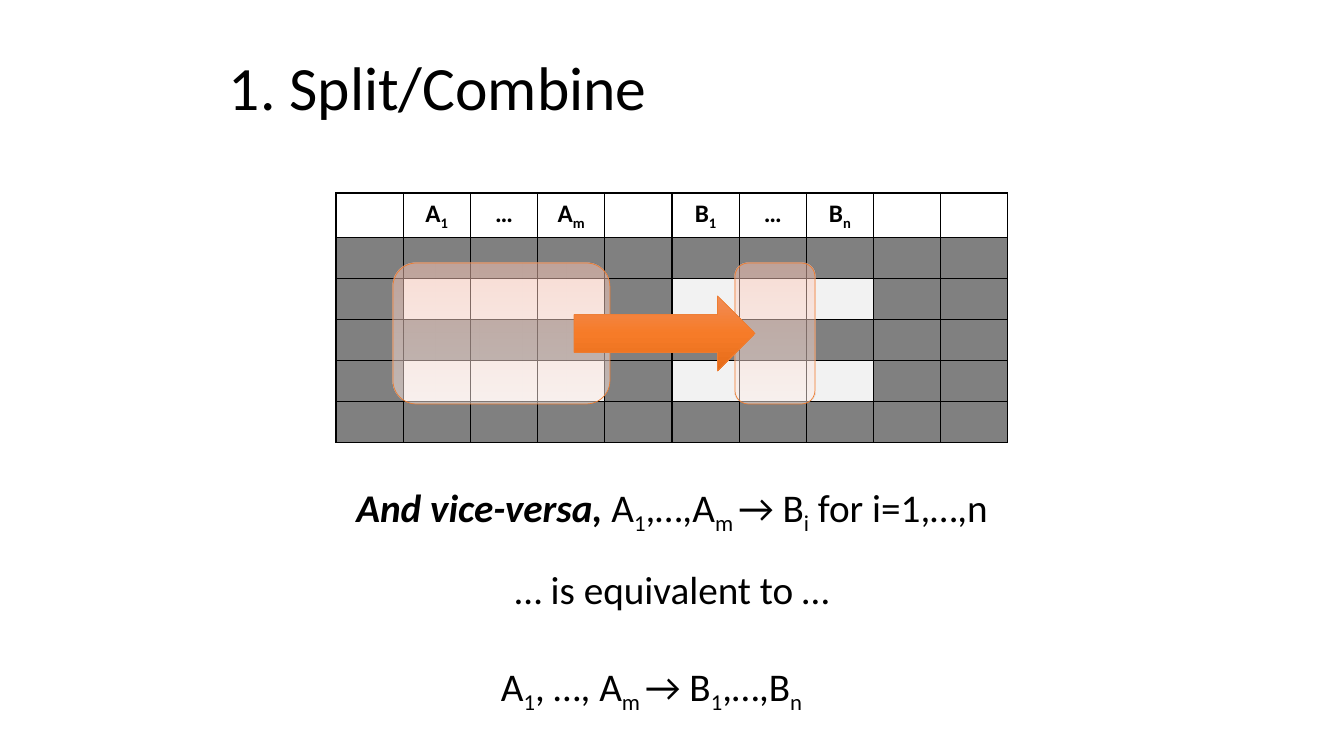
from lxml import etree
from pptx import Presentation
from pptx import util as u
from pptx.dml.color import RGBColor
from pptx.enum import shapes, text
from pptx.oxml import ns

PX = 914400 / 100.8
BLACK = RGBColor(0x00, 0x00, 0x00)
WHITE = RGBColor(0xFF, 0xFF, 0xFF)
GRAY = RGBColor(0x80, 0x80, 0x80)
PALE = RGBColor(0xF2, 0xF2, 0xF2)
ORANGE = RGBColor(0xED, 0x7D, 0x31)
PEACH_TOP = RGBColor(0xFF, 0xC7, 0xB6)
PEACH_MID = RGBColor(0xFF, 0xD7, 0xCB)
PEACH_LOW = RGBColor(0xFF, 0xF0, 0xEB)
ARROW_TOP = RGBColor(0xF1, 0x8C, 0x57)
ARROW_MID = RGBColor(0xF6, 0x7B, 0x28)
ARROW_LOW = RGBColor(0xE5, 0x6C, 0x19)


def emu(*lengths):
    return [u.Emu(round(length * PX)) for length in lengths]


def write(para, marked, size, bold=False):
    para.font.name = "Calibri"
    para.font.size = u.Pt(size)
    para.font.color.rgb = BLACK
    if bold:
        para.font.bold = True
    for index, part in enumerate(marked.split("_")):
        if part:
            span = para.add_run()
            span.text = part
            if index % 2:
                span.font._element.set("baseline", "-25000")


deck = Presentation()
deck.slide_width, deck.slide_height = emu(1344, 756)
page = deck.slides.add_slide(deck.slide_layouts[6])

title = page.shapes.add_textbox(*emu(219, 28, 907, 126)).text_frame
title.word_wrap = True
title.vertical_anchor = text.MSO_ANCHOR.MIDDLE
title.paragraphs[0].line_spacing = 0.9
write(title.paragraphs[0], "1. Split/Combine", 44)

headers = ["", "A_1_", "…", "A_m_", "", "B_1_", "…", "B_n_", "", ""]
table = page.shapes.add_table(6, 10, *emu(336, 193, 672, 249)).table
table.first_row = False
table.horz_banding = False
for column in table.columns:
    column.width = emu(672 / 10)[0]
for r, row in enumerate(table.rows):
    row.height = emu(41 if r else 44)[0]
    for c, cell in enumerate(row.cells):
        para = cell.text_frame.paragraphs[0]
        para.alignment = text.PP_ALIGN.CENTER
        write(para, "" if r else headers[c], 18, bold=True)
        cell.fill.solid()
        if r == 0:
            cell.fill.fore_color.rgb = WHITE
        else:
            cell.fill.fore_color.rgb = PALE if r in (2, 4) and headers[c] else GRAY
        properties = cell._tc.get_or_add_tcPr()
        for position, side in enumerate(("lnL", "lnR", "lnT", "lnB")):
            border = etree.Element(ns.qn(f"a:{side}"), w=str(u.Pt(1)))
            fill = etree.SubElement(border, ns.qn("a:solidFill"))
            etree.SubElement(fill, ns.qn("a:srgbClr"), val=str(BLACK))
            properties.insert(position, border)

statements = [
    (491, 657, 420, text.PP_ALIGN.LEFT, "", "A_1_, …, A_m _→ B_1_,…,B_n_"),
    (336, 560, 672, text.PP_ALIGN.CENTER, "", "… is equivalent to …"),
    (336, 478, 672, text.PP_ALIGN.CENTER, "And vice-versa, ",
     "A_1_,…,A_m _→ B_i_ for i=1,…,n"),
]
for left, top, width, alignment, lead, marked in statements:
    frame = page.shapes.add_textbox(*emu(left, top, width, 57)).text_frame
    frame.word_wrap = True
    para = frame.paragraphs[0]
    para.alignment = alignment
    if lead:
        span = para.add_run()
        span.text = lead
        span.font.bold = span.font.italic = True
    write(para, marked, 28)

peach = [(0, PEACH_TOP), (35, PEACH_MID), (100, PEACH_LOW)]
orange = [(0, ARROW_TOP), (50, ARROW_MID), (100, ARROW_LOW)]
rounded = shapes.MSO_SHAPE.ROUNDED_RECTANGLE
overlays = [
    (rounded, (393, 263, 217, 141), peach, 50),
    (rounded, (735, 263, 80, 141), peach, 50),
    (shapes.MSO_SHAPE.RIGHT_ARROW, (574, 296, 181, 75), orange, 100),
]
for kind, place, stops, opacity in overlays:
    overlay = page.shapes.add_shape(kind, *emu(*place))
    overlay.shadow.inherit = False
    overlay.line.color.rgb = ORANGE
    overlay.line.width = u.Pt(0.5)
    overlay.fill.gradient()
    gradient = overlay._element.spPr.find(ns.qn("a:gradFill"))
    for child in list(gradient):
        gradient.remove(child)
    stop_list = etree.SubElement(gradient, ns.qn("a:gsLst"))
    for position, color in stops:
        stop = etree.SubElement(stop_list, ns.qn("a:gs"), pos=str(position * 1000))
        shade = etree.SubElement(stop, ns.qn("a:srgbClr"), val=str(color))
        if opacity < 100:
            etree.SubElement(shade, ns.qn("a:alpha"), val=str(opacity * 1000))
    etree.SubElement(gradient, ns.qn("a:lin"), ang="5400000", scaled="0")

deck.save("out.pptx")
